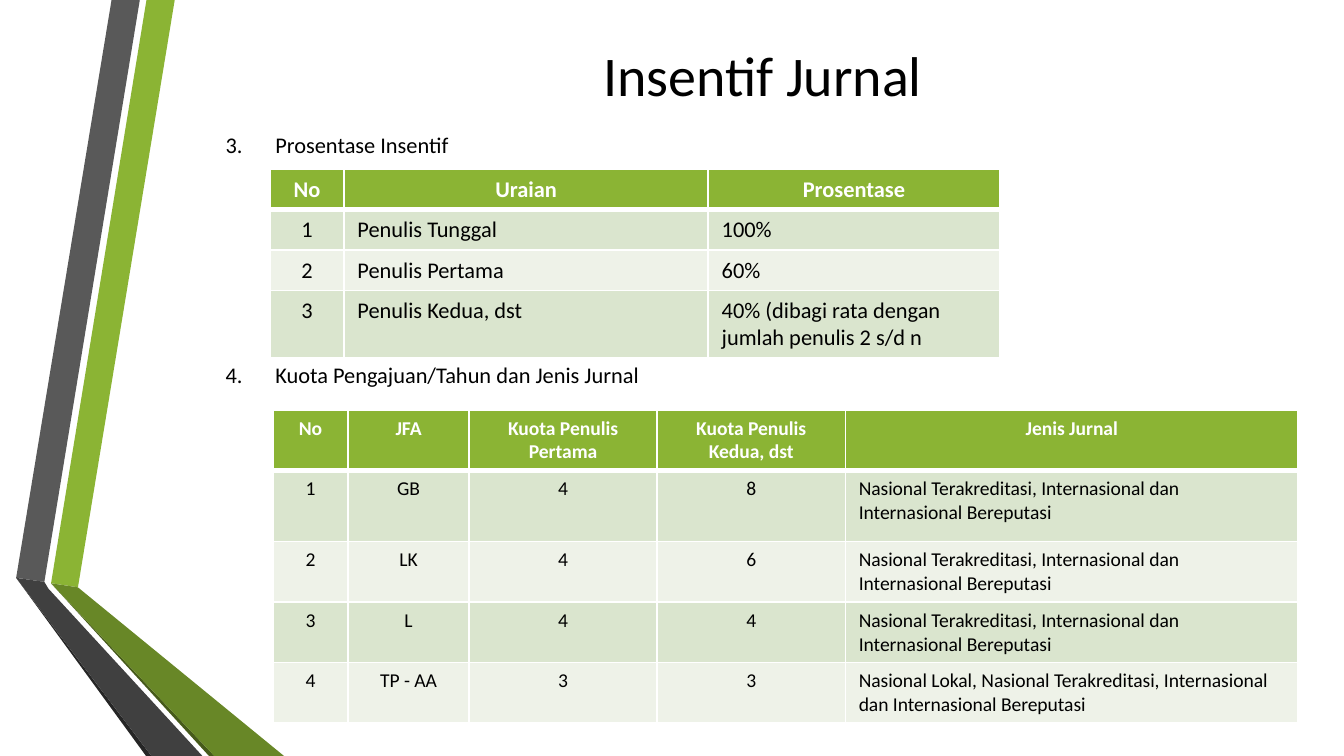
from dataclasses import dataclass

from lxml import etree
from pptx import Presentation
from pptx import util as u
from pptx.dml.color import RGBColor
from pptx.enum import text
from pptx.oxml import ns

COLUMNS, BOTTOM = 1000, 563
UNIT = u.Inches(0.01)
SLIDE_WIDTH = COLUMNS * UNIT
SLIDE_HEIGHT = SLIDE_WIDTH * 9 // 16


@dataclass(frozen=True)
class Theme:
    font: str = "Calibri"
    ink: str = "000000"
    white: str = "FFFFFF"
    green: str = "8BB434"
    green_dark: str = "688727"
    green_edge: str = "465A1A"
    gray: str = "595959"
    gray_dark: str = "404040"
    gray_edge: str = "262626"
    bands: tuple[str, str] = ("DAE5CE", "EEF2E8")
    title_size: float = 30
    body_size: float = 12
    quota_size: float = 10.5
    rule: float = 1
    header_rule: float = 3


THEME = Theme()


@dataclass(frozen=True)
class Area:
    column: int
    row: int
    width: int
    height: int

    def box(self) -> tuple[int, int, int, int]:
        return (self.column * UNIT, self.row * UNIT, self.width * UNIT, self.height * UNIT)


@dataclass(frozen=True)
class Ribbon:
    color: str
    points: tuple[tuple[int, int], ...]


@dataclass(frozen=True)
class Grid:
    area: Area
    widths: tuple[int, ...]
    heights: tuple[int, ...]
    size: float
    centered: int
    rows: tuple[tuple[str, ...], ...]


RIBBONS = (
    Ribbon(THEME.green, ((38, 434), (58, 437), (130, 0), (109, 0))),
    Ribbon(THEME.gray, ((12, 430), (33, 433), (104, 0), (83, 0))),
    Ribbon(THEME.gray_edge, ((12, 430), (109, BOTTOM), (113, BOTTOM))),
    Ribbon(THEME.green_edge, ((38, 434), (156, BOTTOM), (160, BOTTOM))),
    Ribbon(THEME.green_dark, ((38, 434), (160, BOTTOM), (212, BOTTOM), (58, 437))),
    Ribbon(THEME.gray_dark, ((12, 430), (113, BOTTOM), (151, BOTTOM), (36, 438), (33, 433))),
)

ACCREDITED = "Nasional Terakreditasi, Internasional dan Internasional Bereputasi"
LOCAL = "Nasional Lokal, Nasional Terakreditasi, Internasional dan Internasional Bereputasi"

SHARES = Grid(
    Area(201, 126, 543, 120), (55, 271, 217), (24, 24, 24, 48), THEME.body_size, 1,
    (
        ("No", "Uraian", "Prosentase"),
        ("1", "Penulis Tunggal", "100%"),
        ("2", "Penulis Pertama", "60%"),
        ("3", "Penulis Kedua, dst", "40% (dibagi rata dengan jumlah penulis 2 s/d n"),
    ),
)
QUOTAS = Grid(
    Area(203, 305, 763, 190), (56, 90, 140, 140, 337), (41, 53, 31, 28, 37), THEME.quota_size, 4,
    (
        ("No", "JFA", "Kuota Penulis Pertama", "Kuota Penulis Kedua, dst", "Jenis Jurnal"),
        ("1", "GB", "4", "8", ACCREDITED),
        ("2", "LK", "4", "6", ACCREDITED),
        ("3", "L", "4", "4", ACCREDITED),
        ("4", "TP - AA", "3", "3", LOCAL),
    ),
)


def write(paragraph, words: str, size: float, color: str, bold: bool = False) -> None:
    paragraph.text = words
    for run in paragraph.runs:
        run.font.name = THEME.font
        run.font.size = u.Pt(size)
        run.font.bold = bold
        run.font.color.rgb = RGBColor.from_string(color)


def draw_ribbon(slide, ribbon: Ribbon) -> None:
    start, *others = ribbon.points
    builder = slide.shapes.build_freeform(*start, scale=UNIT)
    builder.add_line_segments(others, close=True)
    band = builder.convert_to_shape()
    band.shadow.inherit = False
    band.fill.solid()
    band.fill.fore_color.rgb = RGBColor.from_string(ribbon.color)
    band.line.fill.background()


def place_title(slide, words: str, area: Area) -> None:
    title = slide.shapes.title
    title.left, title.top, title.width, title.height = area.box()
    frame = title.text_frame
    frame.auto_size = text.MSO_AUTO_SIZE.NONE
    frame.vertical_anchor = text.MSO_ANCHOR.BOTTOM
    frame.margin_bottom = u.Inches(0.04)
    heading = frame.paragraphs[0]
    heading.alignment = text.PP_ALIGN.CENTER
    write(heading, words, THEME.title_size, THEME.ink)


def draw_headings(slide, headings: tuple[str, ...], area: Area, gap: float) -> None:
    frame = slide.shapes.add_textbox(*area.box()).text_frame
    frame.word_wrap = True
    for index, words in enumerate(headings):
        heading = frame.add_paragraph() if index else frame.paragraphs[0]
        write(heading, words, THEME.body_size, THEME.ink)
        heading.space_before = u.Pt(gap if index else 0)
        properties = heading._p.get_or_add_pPr()
        properties.set("marL", str(u.Inches(0.37)))
        properties.set("indent", str(-u.Inches(0.37)))


def rule_cell(cell, top: float, bottom: float) -> None:
    properties = cell._tc.get_or_add_tcPr()
    edges = {"L": THEME.rule, "R": THEME.rule, "T": top, "B": bottom}
    for position, (side, width) in enumerate(edges.items()):
        line = etree.Element(ns.qn(f"a:ln{side}"), w=str(u.Pt(width)))
        fill = etree.SubElement(line, ns.qn("a:solidFill"))
        etree.SubElement(fill, ns.qn("a:srgbClr"), val=THEME.white)
        properties.insert(position, line)


def draw_grid(slide, grid: Grid) -> None:
    table = slide.shapes.add_table(len(grid.rows), len(grid.widths), *grid.area.box()).table
    for column, width in zip(table.columns, grid.widths):
        column.width = width * UNIT
    for row, height in zip(table.rows, grid.heights):
        row.height = height * UNIT
    for r, entries in enumerate(grid.rows):
        header = r == 0
        for c, words in enumerate(entries):
            cell = table.cell(r, c)
            cell.fill.solid()
            band = THEME.green if header else THEME.bands[(r - 1) % 2]
            cell.fill.fore_color.rgb = RGBColor.from_string(band)
            entry = cell.text_frame.paragraphs[0]
            write(entry, words, grid.size, THEME.white if header else THEME.ink, header)
            if header or c < grid.centered:
                entry.alignment = text.PP_ALIGN.CENTER
            rule_cell(
                cell,
                THEME.header_rule if r == 1 else THEME.rule,
                THEME.header_rule if header else THEME.rule,
            )


def main() -> None:
    deck = Presentation()
    deck.slide_width, deck.slide_height = SLIDE_WIDTH, SLIDE_HEIGHT
    slide = deck.slides.add_slide(deck.slide_layouts.get_by_name("Title Only"))
    for ribbon in RIBBONS:
        draw_ribbon(slide, ribbon)
    place_title(slide, "Insentif Jurnal", Area(201, 21, 733, 63))
    headings = ("3.\tProsentase Insentif", "4.\tKuota Pengajuan/Tahun dan Jenis Jurnal")
    draw_headings(slide, headings, Area(158, 93, 819, 307), gap=108.5)
    for grid in (SHARES, QUOTAS):
        draw_grid(slide, grid)
    deck.save("out.pptx")


if __name__ == "__main__":
    main()
